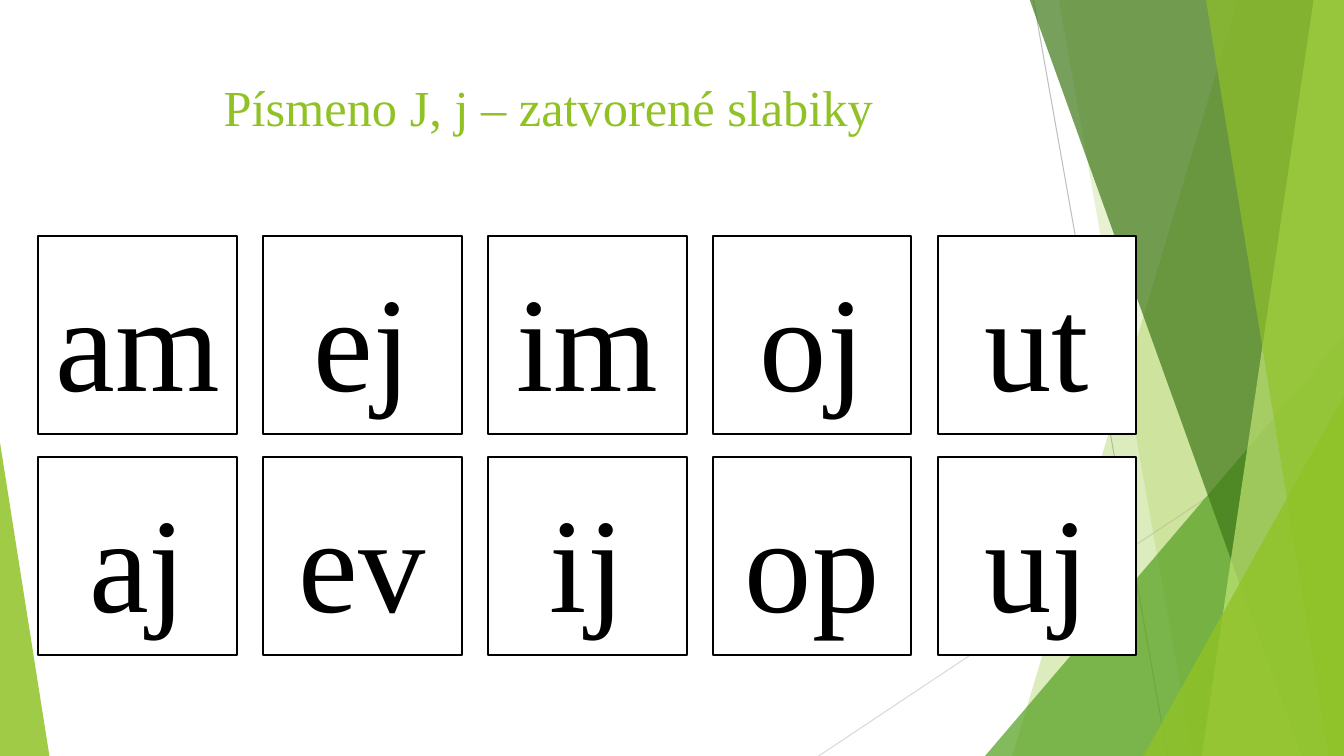
from lxml.etree import SubElement
from pptx import Presentation
from pptx.dml.color import RGBColor
from pptx.enum.shapes import MSO_CONNECTOR as Connector, MSO_SHAPE as Shape
from pptx.enum.text import MSO_ANCHOR as Anchor, PP_ALIGN as Align
from pptx.oxml.ns import qn
from pptx.util import Emu, Pt

PX = 9144  # one hundredth of an inch
WIDTH, HEIGHT = 1333, 750
LIME, GREEN, FOREST, PALE = "90C226", "54A021", "3F7819", "C0E474"
BLACK, WHITE = "000000", "FFFFFF"


def px(*lengths):
    return [Emu(length * PX) for length in lengths]


def color(code):
    return RGBColor.from_string(code)


def write(frame, text, size, ink, font="Times New Roman", anchor=Anchor.MIDDLE,
          before=0, top=10):
    frame.word_wrap = True
    frame.vertical_anchor = anchor
    frame.margin_top = px(top)[0]
    paragraph = frame.paragraphs[0]
    paragraph.alignment = Align.CENTER
    paragraph.space_before = Pt(before)
    run = paragraph.add_run()
    run.text = text
    run.font.name = font
    run.font.size = Pt(size)
    run.font.color.rgb = color(ink)


class SyllableSlide:
    def __init__(self, presentation):
        self.slide = presentation.slides.add_slide(presentation.slide_layouts[6])
        self.shapes = self.slide.shapes

    def paint(self, shape, fill, opacity=100):
        shape.shadow.inherit = False
        shape.fill.solid()
        shape.fill.fore_color.rgb = color(fill)
        shape.line.fill.background()
        if opacity < 100:
            tint = shape.fill._xPr.find(qn("a:solidFill"))[0]
            SubElement(tint, qn("a:alpha"), val=str(opacity * 1000))

    def line(self, start, end, ink):
        line = self.shapes.add_connector(Connector.STRAIGHT, *px(*start, *end))
        line.line.color.rgb = color(ink)
        line.line.width = Pt(0.75)
        SubElement(line._element.spPr, qn("a:effectLst"))

    def band(self, top_left, bottom_left, fill, opacity):
        """A full-height band that reaches the right edge of the slide."""
        builder = self.shapes.build_freeform(top_left, -1, scale=PX)
        builder.add_line_segments(
            [(WIDTH, -1), (WIDTH, HEIGHT), (bottom_left, HEIGHT)], close=True)
        self.paint(builder.convert_to_shape(), fill, opacity)

    def triangle(self, box, apex, fill, opacity):
        shape = self.shapes.add_shape(Shape.ISOSCELES_TRIANGLE, *px(*box))
        shape.adjustments[0] = apex
        self.paint(shape, fill, opacity)

    def title(self, box, text):
        shape = self.shapes.add_textbox(*px(*box))
        write(shape.text_frame, text, 36, LIME, anchor=Anchor.TOP, top=9)

    def card(self, left, top, side, text):
        shape = self.shapes.add_shape(Shape.RECTANGLE, *px(left, top, side, side))
        self.paint(shape, WHITE)
        shape.line.color.rgb = color(BLACK)
        shape.line.width = Pt(1.5)
        write(shape.text_frame, text, 96, BLACK, before=10)


def main():
    presentation = Presentation()
    presentation.slide_width, presentation.slide_height = px(WIDTH, HEIGHT)
    page = SyllableSlide(presentation)

    # Green facets along the edges
    page.line((1025, 0), (1158, HEIGHT), "BFBFBF")
    page.line((WIDTH, 403), (812, HEIGHT), "D9D9D9")
    page.band(1228, 1004, LIME, 30)
    page.band(1050, 1183, LIME, 20)
    page.triangle((977, 333, 356, 417), 1, GREEN, 72)
    page.band(1021, 1291, FOREST, 70)
    page.band(1303, 1192, PALE, 70)
    page.band(1196, 1318, LIME, 65)
    page.triangle((1134, 393, 199, 357), 1, LIME, 80)
    page.triangle((0, 439, 49, 311), 0, LIME, 85)

    # Heading
    page.title((74, 67, 940, 144), "Písmeno J, j – zatvorené slabiky")

    # Syllable cards
    rows = [["am", "ej", "im", "oj", "ut"], ["aj", "ev", "ij", "op", "uj"]]
    for row, syllables in enumerate(rows):
        for column, syllable in enumerate(syllables):
            page.card(38 + 223 * column, 234 + 219 * row, 197, syllable)

    presentation.save("out.pptx")


if __name__ == "__main__":
    main()
